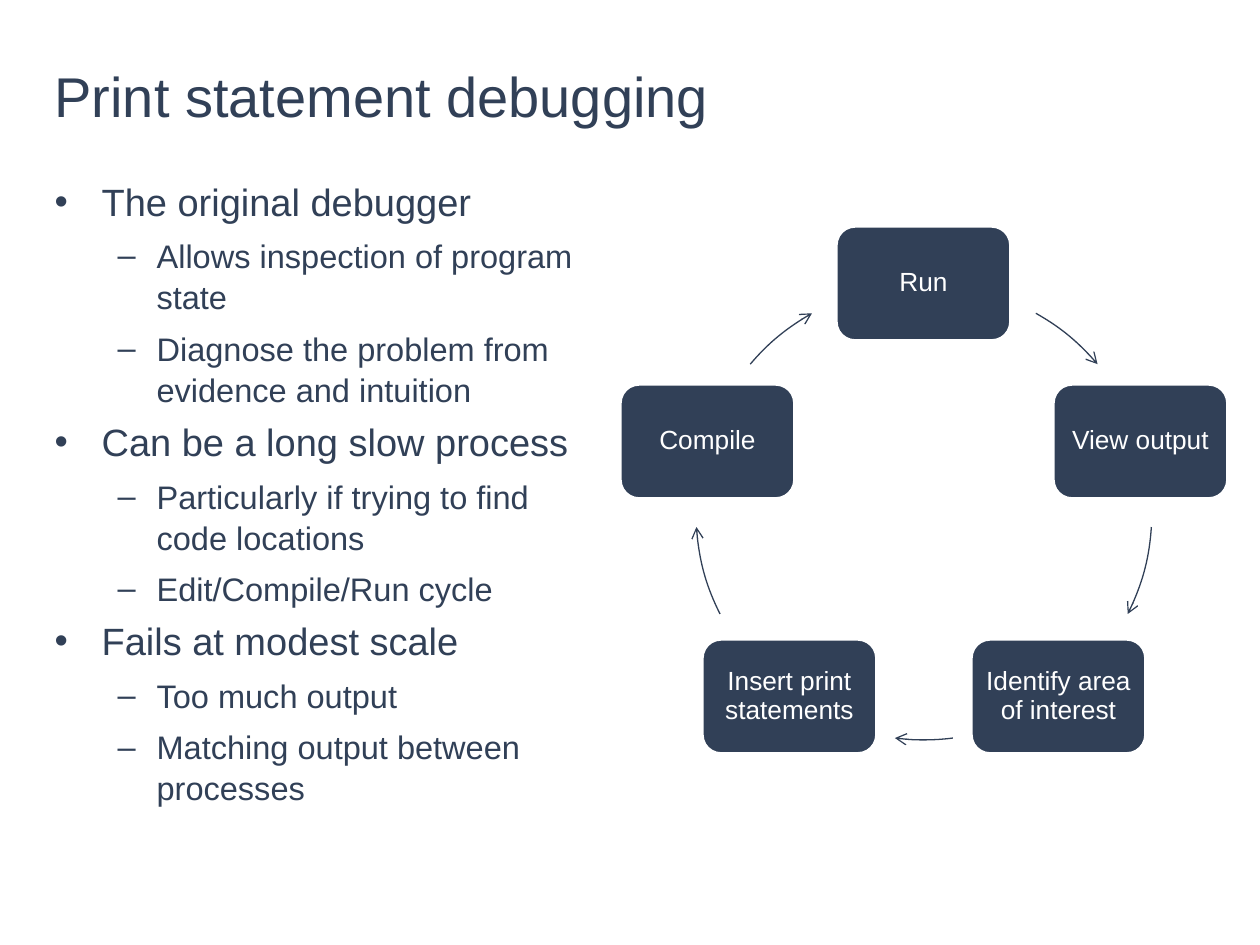
import math

import lxml.etree
import pptx
import pptx.dml.color
import pptx.enum.shapes
import pptx.enum.text
import pptx.oxml.ns
import pptx.util

SCALE = 914400 // 126  # EMU in one px
HUES = {"navy": "314057", "white": "FFFFFF"}
FONT = "Arial"
ALIGN = pptx.enum.text.PP_ALIGN
ANCHOR = pptx.enum.text.MSO_ANCHOR
SHAPE = pptx.enum.shapes.MSO_SHAPE

# Ring: centre, radius and box size in px
MID_X, MID_Y, RADIUS = 924, 512, 228
BOX_W, BOX_H = 175, 115
STEPS = ["Run", "View output", "Identify area of interest",
         "Insert print statements", "Compile"]
# Start and end of each arrow, in degrees clockwise from the top
ARCS = [(29.4, 49.6), (93.8, 116.6), (172.7, 187.3),
        (243.4, 266.2), (310.4, 330.6)]

# Bullet, left margin, hanging indent (px), size and space before (pt)
LEVELS = [("•", 47, 47, 21.7, 4.3), ("–", 102, 39, 18.6, 6)]
POINTS = [
    (0, "The original debugger"),
    (1, "Allows inspection of program state"),
    (1, "Diagnose the problem from evidence and intuition"),
    (0, "Can be a long slow process"),
    (1, "Particularly if trying to find code locations"),
    (1, "Edit/Compile/Run cycle"),
    (0, "Fails at modest scale"),
    (1, "Too much output"),
    (1, "Matching output between processes"),
]


def px(num):
    return pptx.util.Emu(round(num) * SCALE)


def hue(name):
    return pptx.dml.color.RGBColor.from_string(HUES[name])


def place(item, left, top, width, height):
    item.left, item.top = px(left), px(top)
    item.width, item.height = px(width), px(height)


def write(para, text, size, color="navy", align=ALIGN.LEFT,
          before=0, lead=1.0):
    para.text = text
    para.alignment = align
    para.space_before = pptx.util.Pt(before)
    para.line_spacing = lead
    font = para.runs[0].font
    font.name, font.size = FONT, pptx.util.Pt(size)
    font.color.rgb = hue(color)


def setup(frame, anchor):
    frame.word_wrap = True
    frame.auto_size = pptx.enum.text.MSO_AUTO_SIZE.NONE
    frame.vertical_anchor = anchor


def bullet(para, char, left, hang):
    props = para._p.get_or_add_pPr()
    props.set("marL", str(px(left)))
    props.set("indent", str(-px(hang)))
    mark = lxml.etree.SubElement(props, pptx.oxml.ns.qn("a:buChar"))
    mark.set("char", char)


def fill_list(frame):
    setup(frame, ANCHOR.TOP)
    frame.margin_top = px(8)
    for i, (level, text) in enumerate(POINTS):
        para = frame.paragraphs[0] if i == 0 else frame.add_paragraph()
        char, left, hang, size, gap = LEVELS[level]
        para.level = level
        bullet(para, char, left, hang)
        write(para, text, size, before=gap if i else 0, lead=1.05)


def add_box(slide, text, angle):
    x = MID_X + RADIUS * math.sin(angle) - BOX_W / 2
    y = MID_Y - RADIUS * math.cos(angle) - BOX_H / 2
    box = slide.shapes.add_shape(SHAPE.ROUNDED_RECTANGLE, px(x), px(y),
                                 px(BOX_W), px(BOX_H))
    box.shadow.inherit = False
    box.fill.solid()
    box.fill.fore_color.rgb = hue("navy")
    box.line.color.rgb = hue("white")
    box.line.width = pptx.util.Pt(2)
    frame = box.text_frame
    setup(frame, ANCHOR.MIDDLE)
    frame.margin_left = frame.margin_right = px(8)
    frame.margin_top = frame.margin_bottom = px(8)
    write(frame.paragraphs[0], text, 15, color="white",
          align=ALIGN.CENTER, lead=0.9)


def add_arc(slide, start, end):
    arc = slide.shapes.add_shape(SHAPE.ARC, px(MID_X - RADIUS),
                                 px(MID_Y - RADIUS),
                                 px(2 * RADIUS), px(2 * RADIUS))
    # Angles count from the right side, in units of 1/60000 degree
    for i, angle in enumerate((start, end)):
        arc.adjustments[i] = (angle - 90) % 360 * 0.6
    arc.shadow.inherit = False
    arc.fill.background()
    arc.line.color.rgb = hue("navy")
    arc.line.width = pptx.util.Pt(0.75)
    tail = lxml.etree.SubElement(arc.line._get_or_add_ln(),
                                 pptx.oxml.ns.qn("a:tailEnd"))
    tail.set("type", "arrow")


def main():
    deck = pptx.Presentation()
    deck.slide_width, deck.slide_height = px(1260), px(945)
    slide = deck.slides.add_slide(deck.slide_layouts[1])

    # Title and list
    title, body = slide.shapes.title, slide.placeholders[1]
    place(title, 42, 53, 1187, 84)
    setup(title.text_frame, ANCHOR.MIDDLE)
    write(title.text_frame.paragraphs[0], "Print statement debugging", 32)
    place(body, 42, 168, 557, 651)
    fill_list(body.text_frame)

    # Cycle of steps
    for i, (text, arc) in enumerate(zip(STEPS, ARCS)):
        add_box(slide, text, math.tau * i / len(STEPS))
        add_arc(slide, *arc)

    deck.save("out.pptx")


if __name__ == "__main__":
    main()
